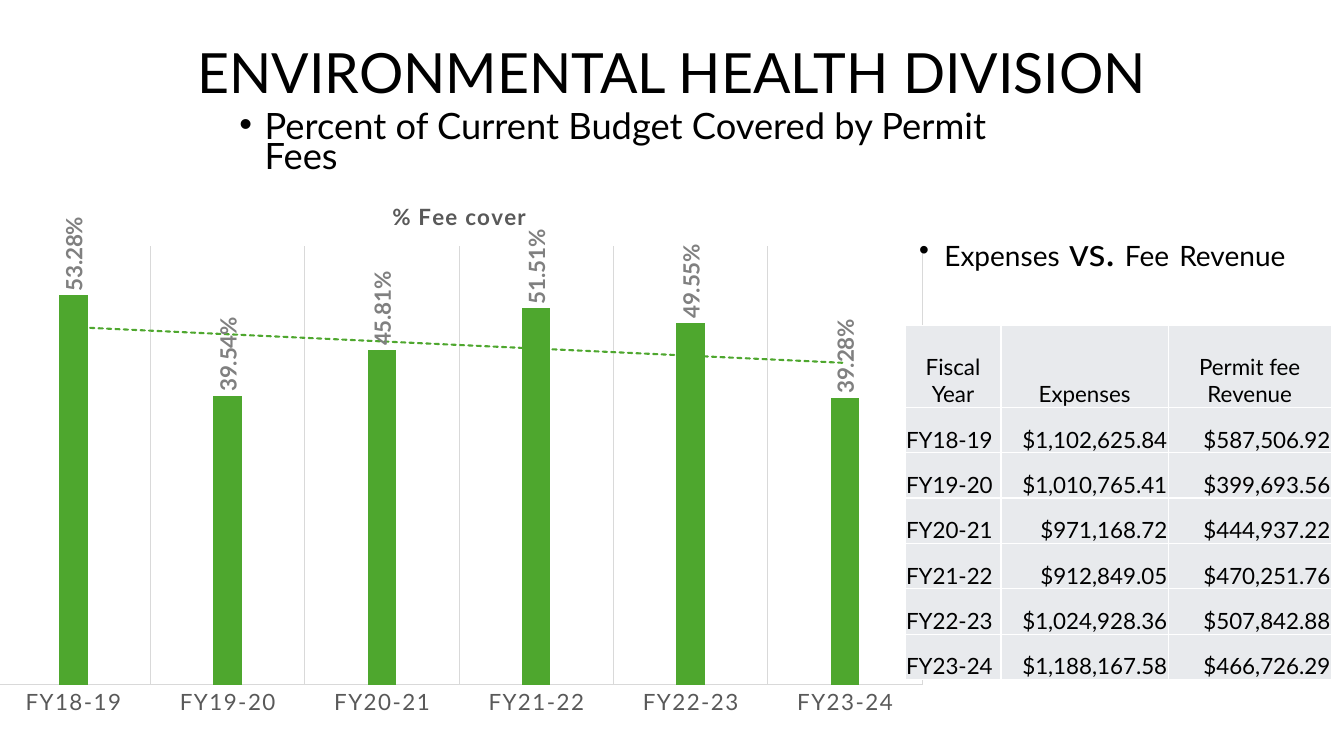
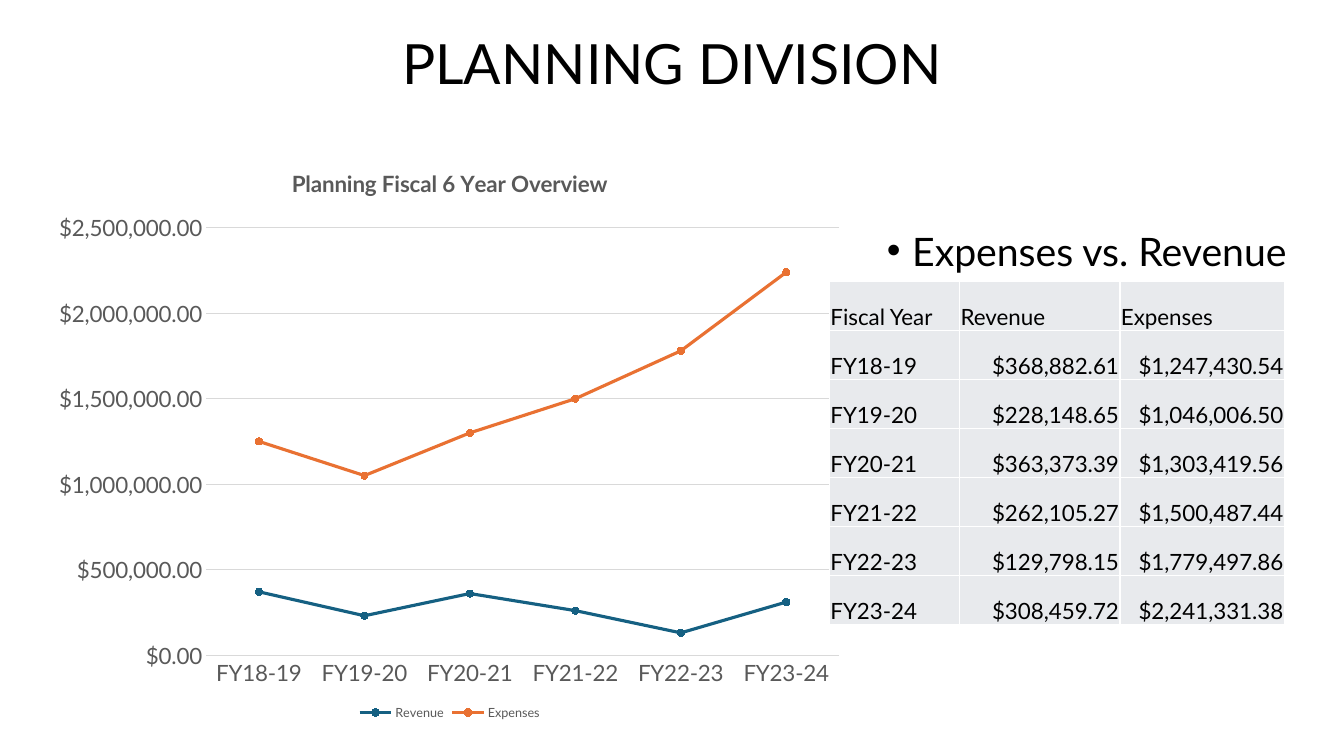
from dataclasses import dataclass

from pptx import Presentation
from pptx.chart.data import CategoryChartData as ChartData
from pptx.dml.color import RGBColor as RGB
from pptx.enum.chart import XL_CHART_TYPE as KIND
from pptx.enum.chart import XL_LABEL_POSITION as SPOT
from pptx.enum.chart import XL_LEGEND_POSITION as SIDE
from pptx.enum.chart import XL_MARKER_STYLE as MARK
from pptx.enum.chart import XL_TICK_MARK as TICK
from pptx.enum.text import MSO_ANCHOR as ANCHOR
from pptx.enum.text import PP_ALIGN as ALIGN
from pptx.oxml import parse_xml
from pptx.oxml.ns import nsdecls
from pptx.util import Pt


@dataclass(frozen=True)
class Theme:
    """Colours, type sizes and font of the deck."""
    face: str = "Lato"
    ink: str = "000000"
    grey: str = "595959"
    label: str = "808080"
    rule: str = "D9D9D9"
    cell: str = "E8EAED"
    edge: str = "FFFFFF"
    green: str = "4EA72E"
    blue: str = "156082"
    orange: str = "E97132"
    head: float = 39.6
    lead: float = 25.9
    large: float = 28
    small: float = 20
    body: float = 16
    key: float = 9


YEARS = [f"FY{y}-{y + 1}" for y in range(18, 24)]


class Deck:
    """Style and current slide, with one method per kind of element."""

    def __init__(self, theme):
        self.theme = theme
        self.show = Presentation()
        self.show.slide_width, self.show.slide_height = Pt(960), Pt(540)
        self.slide = None

    def page(self, title, height):
        self.slide = self.show.slides.add_slide(self.show.slide_layouts[6])
        frame = self.box(66, 29, 828, height)
        frame.vertical_anchor = ANCHOR.MIDDLE
        para = frame.paragraphs[0]
        para.text = title
        para.alignment = ALIGN.CENTER
        para.line_spacing = 0.9
        self.style(para.font, self.theme.head)

    def box(self, *place):
        frame = self.slide.shapes.add_textbox(*map(Pt, place)).text_frame
        frame.word_wrap = True
        return frame

    def style(self, font, size=None, color=None, bold=None):
        font.name = self.theme.face
        font.color.rgb = RGB.from_string(color or self.theme.ink)
        if size:
            font.size = Pt(size)
        if bold is not None:
            font.bold = bold

    def stroke(self, line, color, width=0.75):
        line.color.rgb = RGB.from_string(color)
        line.width = Pt(width)

    def bullet(self, place, parts, space):
        para = self.box(*place).paragraphs[0]
        props = para._p.get_or_add_pPr()
        props.set("marL", str(Pt(18)))
        props.set("indent", str(Pt(-18)))
        props.append(parse_xml(f'<a:buFont {nsdecls("a")} typeface="Arial"/>'))
        props.append(parse_xml(f'<a:buChar {nsdecls("a")} char="•"/>'))
        para.line_spacing = space
        same = len({size for _, size in parts}) == 1
        self.style(para.font, parts[0][1] if same else None)
        for text, size in parts:
            run = para.add_run()
            run.text = text
            if not same:
                run.font.size = Pt(size)

    def table(self, spot, cols, rows, data, align, under=False):
        size = sum(cols), sum(rows)
        frame = self.slide.shapes.add_table(
            len(rows), len(cols), *map(Pt, (*spot, *size)))
        grid = frame.table
        grid.first_row = grid.horz_banding = False
        for col, width in zip(grid.columns, cols):
            col.width = Pt(width)
        for row, height in zip(grid.rows, rows):
            row.height = Pt(height)
        for r, line in enumerate(data):
            for c, text in enumerate(line):
                side = ALIGN.RIGHT if c else ALIGN.LEFT
                self.fill(grid.cell(r, c), text, side if r else align,
                          under and r == 0)

    def fill(self, cell, text, align, under):
        props = cell._tc.get_or_add_tcPr()
        for side in "LRTB":
            props.append(parse_xml(
                f'<a:ln{side} {nsdecls("a")} w="{Pt(1)}"><a:solidFill>'
                f'<a:srgbClr val="{self.theme.edge}"/></a:solidFill>'
                f'</a:ln{side}>'))
        cell.fill.solid()
        cell.fill.fore_color.rgb = RGB.from_string(self.theme.cell)
        cell.margin_left = cell.margin_right = cell.margin_top = Pt(0.7)
        cell.margin_bottom = 0
        cell.vertical_anchor = ANCHOR.BOTTOM
        para = cell.text_frame.paragraphs[0]
        para.text = text
        para.alignment = align
        self.style(para.font, self.theme.body)
        if under:
            para.font.underline = True

    def chart(self, kind, place, title, series, area, top, form):
        look = self.theme
        data = ChartData(number_format=form)
        data.categories = YEARS
        for name, vals in series:
            data.add_series(name, vals)
        chart = self.slide.shapes.add_chart(
            kind, *map(Pt, place), data).chart
        self.style(chart.font, 10)
        chart.has_legend = False
        chart.has_title = True
        para = chart.chart_title.text_frame.paragraphs[0]
        para.text = title
        self.style(para.font, look.body, look.grey, True)
        chart.chart_title.include_in_layout = False
        chart.plots[0].vary_by_categories = False
        for axis in (chart.category_axis, chart.value_axis):
            axis.major_tick_mark = axis.minor_tick_mark = TICK.NONE
            axis.has_major_gridlines = False
            self.style(axis.tick_labels.font, look.body, look.grey)
        self.stroke(chart.category_axis.format.line, look.rule)
        scale = chart.value_axis
        scale.minimum_scale, scale.maximum_scale = 0, top
        scale.tick_labels.number_format = form
        scale.tick_labels.number_format_is_linked = False
        self.fit(chart, area)
        return chart

    def fit(self, chart, area):
        plot = chart.element.xpath("//c:plotArea")[0]
        for old in plot.xpath("c:layout"):
            plot.remove(old)
        modes = '<c:xMode val="edge"/><c:yMode val="edge"/>'
        sizes = "".join(f'<c:{k} val="{v}"/>' for k, v in zip("xywh", area))
        plot.insert(0, parse_xml(
            f'<c:layout {nsdecls("c")}><c:manualLayout>'
            f'<c:layoutTarget val="inner"/>{modes}{sizes}'
            f'</c:manualLayout></c:layout>'))

    def grid(self, axis):
        axis.has_major_gridlines = True
        self.stroke(axis.major_gridlines.format.line, self.theme.rule)

    def bars(self, place, name, vals):
        look = self.theme
        chart = self.chart(KIND.COLUMN_CLUSTERED, place, name,
                           [(name, vals)], (0.02, 0.12, 0.96, 0.8),
                           0.6, "0.00%")
        self.grid(chart.category_axis)
        chart.value_axis.visible = False
        plot = chart.plots[0]
        plot.gap_width, plot.overlap = 444, -90
        bar = plot.series[0]
        bar.format.fill.solid()
        bar.format.fill.fore_color.rgb = RGB.from_string(look.green)
        tags = bar.data_labels
        tags.show_value = True
        tags.number_format = "0.00%"
        tags.number_format_is_linked = False
        tags.position = SPOT.OUTSIDE_END
        self.style(tags.font, look.body, look.label, True)
        root = chart.element
        for turn in root.xpath("//c:dLbls//a:bodyPr"):
            turn.set("rot", "-5400000")
            turn.set("vert", "horz")
        for part, gap in (("title", "100"), ("catAx", "120")):
            for props in root.xpath(f"//c:{part}//a:defRPr"):
                props.set("spc", gap)
        root.xpath("//c:ser/c:cat")[0].addprevious(parse_xml(
            f'<c:trendline {nsdecls("c", "a")}><c:spPr>'
            f'<a:ln w="{Pt(1.5)}" cap="rnd"><a:solidFill>'
            f'<a:srgbClr val="{look.green}"/></a:solidFill>'
            f'<a:prstDash val="sysDash"/></a:ln></c:spPr>'
            f'<c:trendlineType val="linear"/><c:dispRSqr val="0"/>'
            f'<c:dispEq val="0"/></c:trendline>'))

    def lines(self, place, title, series):
        look = self.theme
        chart = self.chart(KIND.LINE_MARKERS, place, title, series,
                           (0.2, 0.14, 0.78, 0.74), 2500000,
                           '"$"#,##0.00')
        self.grid(chart.value_axis)
        chart.value_axis.major_unit = 500000
        chart.value_axis.format.line.fill.background()
        chart.has_legend = True
        chart.legend.position = SIDE.BOTTOM
        chart.legend.include_in_layout = False
        self.style(chart.legend.font, look.key, look.grey)
        for line, color in zip(chart.plots[0].series,
                               (look.blue, look.orange)):
            line.smooth = False
            self.stroke(line.format.line, color, 2.25)
            dot = line.marker
            dot.style, dot.size = MARK.CIRCLE, 5
            dot.format.fill.solid()
            dot.format.fill.fore_color.rgb = RGB.from_string(color)
            self.stroke(dot.format.line, color)


def rows(head, left, right):
    return [head, *zip(YEARS, left, right)]


def health(deck):
    look = deck.theme
    deck.page("ENVIRONMENTAL HEALTH DIVISION", 50.4)
    deck.bullet((164, 78.5, 595, 32),
                [("Percent of Current Budget Covered by Permit Fees",
                  look.lead)], 0.7)
    deck.bars((-16.5, 129, 689, 391.5), "% Fee cover",
              (0.5328, 0.3954, 0.4581, 0.5151, 0.4955, 0.3928))
    deck.table(
        (646.5, 232.5), (68.5, 119.5, 116.5), [58.5] + [32.4] * 6,
        rows(("Fiscal Year", "Expenses", "Permit fee Revenue"),
             ("$1,102,625.84", "$1,010,765.41", "$971,168.72",
              "$912,849.05", "$1,024,928.36", "$1,188,167.58"),
             ("$587,506.92", "$399,693.56", "$444,937.22",
              "$470,251.76", "$507,842.88", "$466,726.29")),
        ALIGN.CENTER)
    deck.bullet((649.5, 165, 301.5, 36.5),
                [("Expenses", look.small), (" vs. ", look.large),
                 ("Fee", look.small), (" ", look.large),
                 ("Revenue", look.small)], 0.8)


def planning(deck):
    deck.page("PLANNING DIVISION", 36.7)
    deck.bullet((626.5, 165, 301.5, 36.5),
                [("Expenses vs. Revenue", deck.theme.large)], 0.8)
    deck.lines((31.5, 105, 579.5, 412.5), "Planning Fiscal 6 Year Overview",
               [("Revenue",
                 (370000, 230000, 360000, 260000, 130000, 310000)),
                ("Expenses",
                 (1250000, 1050000, 1300000, 1500000, 1780000, 2240000))])
    deck.table(
        (592.5, 201), (93, 114.5, 117.5), [35] * 7,
        rows(("Fiscal Year", "Revenue", "Expenses"),
             ("$368,882.61", "$228,148.65", "$363,373.39",
              "$262,105.27", "$129,798.15", "$308,459.72"),
             ("$1,247,430.54", "$1,046,006.50", "$1,303,419.56",
              "$1,500,487.44", "$1,779,497.86", "$2,241,331.38")),
        ALIGN.LEFT, under=True)


def main():
    deck = Deck(Theme())
    health(deck)
    planning(deck)
    deck.show.save("out.pptx")


if __name__ == "__main__":
    main()
